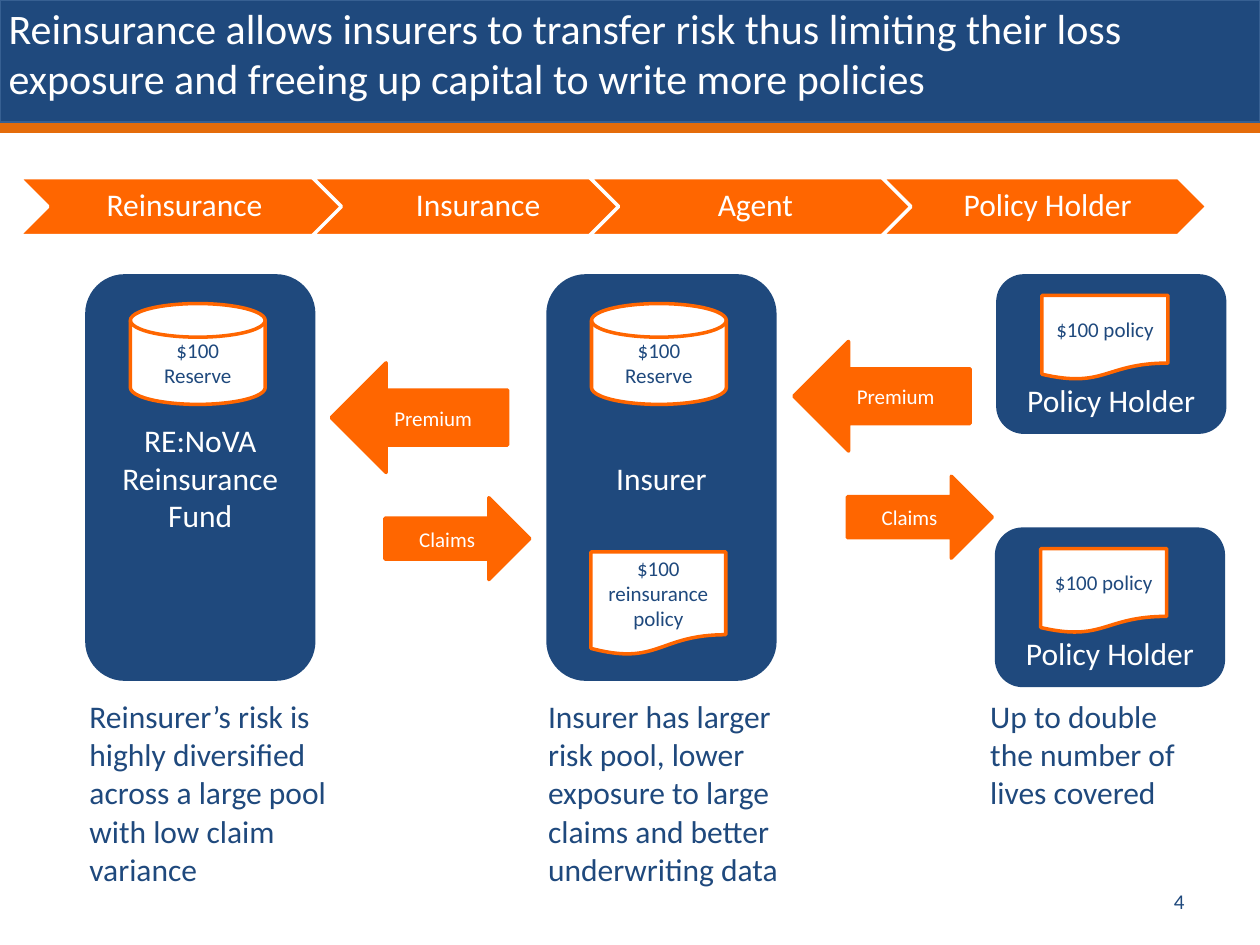
from pptx import Presentation
from pptx.dml.color import RGBColor
from pptx.enum.shapes import MSO_SHAPE as Kind
from pptx.enum.text import MSO_ANCHOR as Anchor, PP_ALIGN as Align
from pptx.util import Inches, Pt

NAVY, ORANGE, WHITE = "1F497D", "FF6600", "FFFFFF"
COLS, ROWS = 100, 75


def tint(code):
    return RGBColor.from_string(code)


class Board:
    """The slide and its style; lengths are in columns and rows of the grid."""

    font = "Calibri"
    big, small = 18, 12

    def __init__(self, deck):
        self.slide = deck.slides.add_slide(deck.slide_layouts[6])
        self.shapes = self.slide.shapes
        self.col = deck.slide_width / COLS
        self.row = deck.slide_height / ROWS

    def area(self, x, y, w, h):
        return (round(x * self.col), round(y * self.row),
                round(w * self.col), round(h * self.row))

    def letter(self, frame, text, size, color, align):
        """Fill a text frame, one paragraph a line, in the given style."""
        frame.text = text
        for para in frame.paragraphs:
            para.alignment = align
            para.font.name = self.font
            para.font.size = Pt(size)
            para.font.color.rgb = tint(color)

    def label(self, box, text, size, anchor, align=Align.LEFT, color=WHITE):
        frame = self.shapes.add_textbox(*self.area(*box)).text_frame
        frame.word_wrap = True
        frame.vertical_anchor = anchor
        self.letter(frame, text, size, color, align)

    def shape(self, kind, box, text="", fill=NAVY, line=None, size=big,
              color=WHITE, anchor=Anchor.MIDDLE, width=2):
        item = self.shapes.add_shape(kind, *self.area(*box))
        item.shadow.inherit = False
        item.fill.solid()
        item.fill.fore_color.rgb = tint(fill)
        item.line.color.rgb = tint(line or fill)
        item.line.width = Pt(width)
        if text:
            frame = item.text_frame
            frame.word_wrap = True
            frame.vertical_anchor = anchor
            self.letter(frame, text, size, color, Align.CENTER)
        return item

    def step(self, x, text):
        """Add one chevron of the chain across the top."""
        frame = self.shape(Kind.CHEVRON, (x, 14.1, 25.8, 4.6), text,
                           ORANGE, WHITE).text_frame
        frame.margin_left = Inches(0.08)
        frame.margin_right = frame.margin_top = frame.margin_bottom = Inches(0.03)
        frame.paragraphs[0].line_spacing = 0.9

    def party(self, x, text):
        """Add a tall panel for a company with its reserve."""
        self.shape(Kind.ROUNDED_RECTANGLE, (x, 21.9, 18, 32), text)
        self.token(Kind.FLOWCHART_MAGNETIC_DISK, (x + 3.45, 24.1, 10.7, 8),
                   "$100 Reserve")

    def holder(self, x, y):
        self.shape(Kind.ROUNDED_RECTANGLE, (x, y, 18, 12.4), "Policy Holder",
                   anchor=Anchor.BOTTOM)
        self.token(Kind.FLOWCHART_DOCUMENT, (x + 3.5, y + 1.55, 10, 6.7),
                   "$100 policy")

    def token(self, kind, box, text):
        self.shape(kind, box, text, WHITE, ORANGE, self.small, NAVY)

    def trade(self, x, y):
        """Add a premium arrow and the claims arrow that answers it."""
        for kind, box, text in (
                (Kind.LEFT_ARROW, (x, y, 14, 8.7), "Premium"),
                (Kind.RIGHT_ARROW, (x + 4.25, y + 10.7, 11.5, 6.5), "Claims")):
            self.shape(kind, box, text, ORANGE, size=self.small)

    def table(self, box, widths, texts):
        grid = self.shapes.add_table(1, len(widths), *self.area(*box)).table
        grid.first_row = grid.horz_banding = False
        for col, width in zip(grid.columns, widths):
            col.width = round(width * self.col)
        for cell, text in zip(grid.rows[0].cells, texts):
            cell.fill.background()
            self.letter(cell.text_frame, text, self.big, NAVY, Align.LEFT)


def main():
    deck = Presentation()
    deck.slide_width, deck.slide_height = Inches(10), Inches(7.5)
    board = Board(deck)

    board.shape(Kind.RECTANGLE, (0, 0, COLS, 9.7), line="376092", width=0.75)
    board.label((-0.3, 2, 96.9, 6.7),
                "Reinsurance allows insurers to transfer risk thus limiting their "
                "loss exposure and freeing up capital to write more policies",
                24, Anchor.BOTTOM)
    board.shape(Kind.RECTANGLE, (0, 9.9, COLS, 0.5), fill="E46C0A")

    for x, text in ((1.5, "Reinsurance"), (24.8, "Insurance"),
                    (46.8, "Agent"), (70, "Policy Holder")):
        board.step(x, text)

    board.party(6.9, "RE:NoVA Reinsurance Fund")
    board.party(43.5, "Insurer")
    board.token(Kind.FLOWCHART_DOCUMENT, (46.9, 43.8, 10.7, 8.2),
                "$100\nreinsurance policy")
    board.holder(79.2, 21.9)
    board.holder(79.1, 42)
    board.trade(26.3, 28.8)
    board.trade(63, 27.1)

    board.table((6.1, 54.9, 89.7, 15.1), (20.9, 15.5, 23.7, 11.4, 18.2), (
        "Reinsurer’s risk is highly diversified across a large pool "
        "with low claim variance", "",
        "Insurer has larger risk pool, lower exposure to large claims "
        "and better underwriting data", "",
        "Up to double the number of lives covered"))
    board.label((71.7, 69.5, 23.3, 4), "4", board.small, Anchor.MIDDLE,
                Align.RIGHT, NAVY)

    deck.save("out.pptx")


if __name__ == "__main__":
    main()
